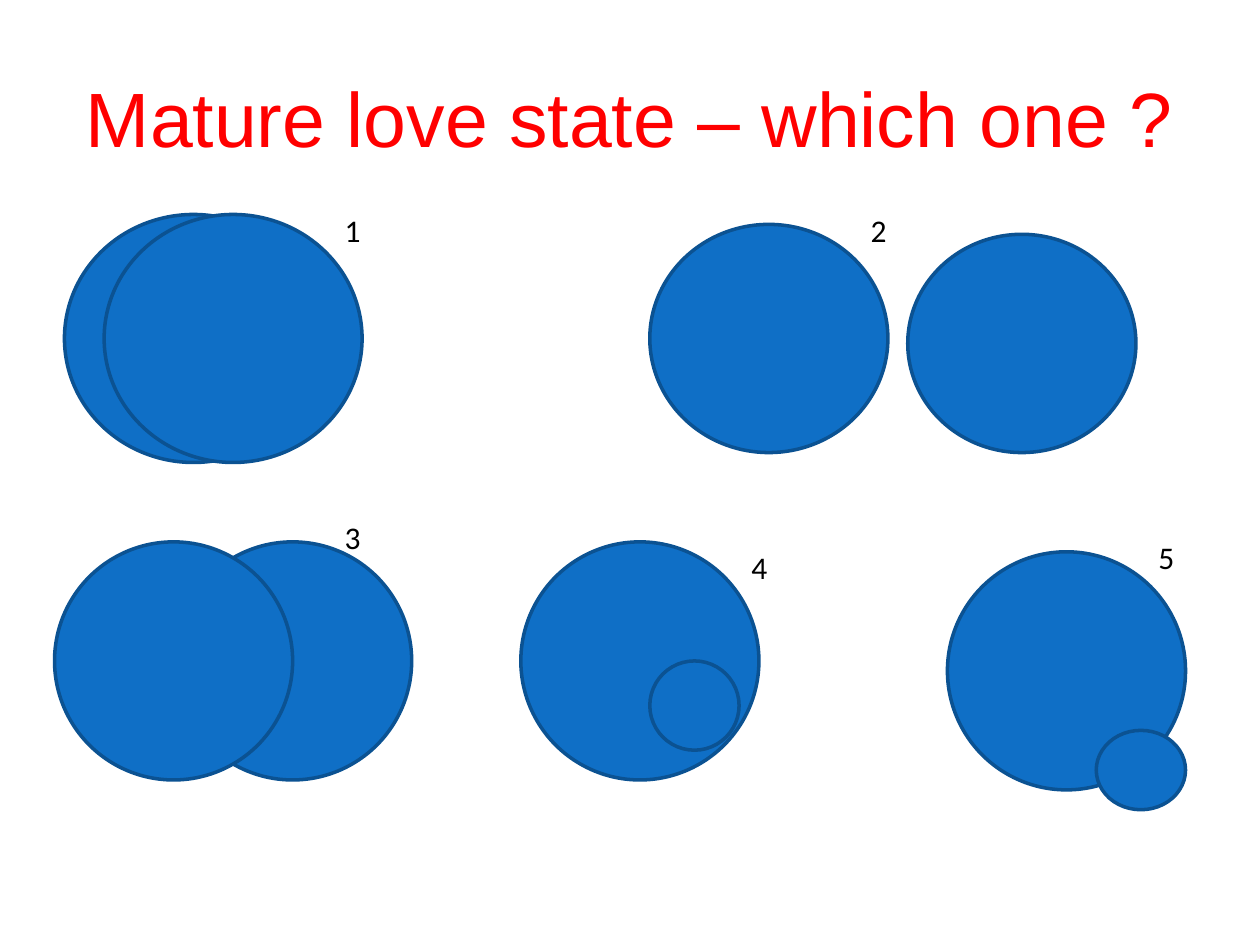
"""Build the slide that asks which pair of circles shows mature love."""
from pptx import Presentation
from pptx.dml.color import RGBColor
from pptx.enum.shapes import MSO_SHAPE as Shape
from pptx.enum.text import MSO_ANCHOR as Anchor, MSO_AUTO_SIZE as AutoSize, PP_ALIGN as Align
from pptx.util import Inches, Mm, Pt

COLORS = {"title": "FF0000", "fill": "0F6FC6", "line": "0B5292", "label": "000000"}
CELL = Mm(2)
LEFT, TOP = Mm(1), Mm(1.24)

deck = Presentation()
deck.slide_width, deck.slide_height = Inches(10), Inches(7.5)
slide = deck.slides.add_slide(deck.slide_layouts[6])


def grid(column, row, columns, rows):
    return LEFT + column * CELL, TOP + row * CELL, columns * CELL, rows * CELL


def add_text(area, text, font_name, size, color):
    box = slide.shapes.add_textbox(*area)
    box.text_frame.word_wrap = True
    para = box.text_frame.paragraphs[0]
    para.text = text
    para.font.name = font_name
    para.font.size = Pt(size)
    para.font.color.rgb = RGBColor.from_string(COLORS[color])
    return box.text_frame


width, height = deck.slide_width, deck.slide_height
title_area = (int(width * 0.05), int(height * 0.04), int(width * 0.9), int(height / 6))
title = add_text(title_area, "Mature love state – which one ?", "Arial", 44, "title")
title.vertical_anchor = Anchor.MIDDLE
title.paragraphs[0].alignment = Align.CENTER

states = [
    ((33, 20, 7), [(6, 21, 26, 25), (10, 21, 26, 25)]),
    ((86, 20, 5), [(91, 23, 23, 22), (65, 22, 24, 23)]),
    ((33, 51, 7), [(17, 54, 24, 24), (5, 54, 24, 24)]),
    ((74, 54, 6), [(52, 54, 24, 24), (65, 66, 9, 9)]),
    ((115, 53, 5), [(95, 55, 24, 24), (110, 73, 9, 8)]),
]

for number, (label, circles) in enumerate(states, start=1):
    for cells in circles:
        circle = slide.shapes.add_shape(Shape.OVAL, *grid(*cells))
        circle.shadow.inherit = False
        circle.fill.solid()
        circle.fill.fore_color.rgb = RGBColor.from_string(COLORS["fill"])
        circle.line.color.rgb = RGBColor.from_string(COLORS["line"])
        circle.line.width = Pt(2)
    frame = add_text(grid(*label, 5), str(number), "Calibri", 18, "label")
    frame.auto_size = AutoSize.SHAPE_TO_FIT_TEXT

deck.save("out.pptx")
